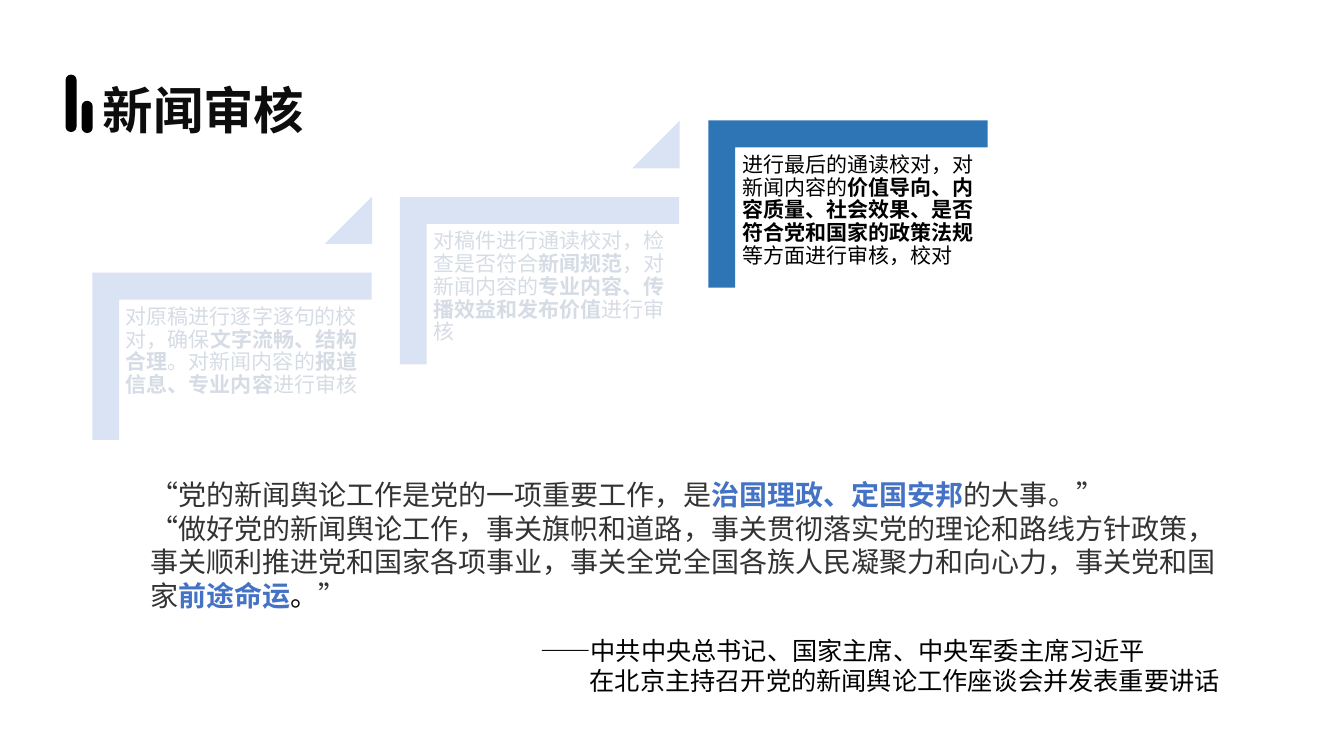
import pptx
import pptx.dml.color
import pptx.enum.lang
import pptx.enum.shapes
import pptx.enum.text
import pptx.util

PX = 9144  # EMU per px, 100 px to the inch
FONT = "Times New Roman"
SHAPES = pptx.enum.shapes.MSO_SHAPE
CORNER = SHAPES.from_xml("corner")
ANCHORS = pptx.enum.text.MSO_ANCHOR
CHINESE = pptx.enum.lang.MSO_LANGUAGE_ID.SIMPLIFIED_CHINESE

BLACK, TITLE_INK, QUOTE_INK, ACCENT = "000000", "0D0D0D", "333333", "4472C4"
FADED_FILL, FADED_INK, ACTIVE_FILL = "DAE3F3", "D6DCE5", "2E75B6"

# Each run is (text, bold)
REVIEW_STEPS = [
    [("对原稿进行逐字逐句的校对，确保", False), ("文字流畅、结构合理", True),
     ("。对新闻内容的", False), ("报道信息、专业内容", True), ("进行审核", False)],
    [("对稿件进行通读校对，检查是否符合", False), ("新闻规范", True),
     ("，对新闻内容的", False), ("专业内容、传播效益和发布价值", True),
     ("进行审核", False)],
    [("进行最后的通读校对，对新闻内容的", False),
     ("价值导向、内容质量、社会效果、是否符合党和国家的政策法规", True),
     ("等方面进行审核，校对", False)],
]

# Each run is (text, bold, colour)
QUOTE = [
    [("“党的新闻舆论工作是党的一项重要工作，是", False, QUOTE_INK),
     ("治国理政、定国安邦", True, ACCENT), ("的大事。”", False, QUOTE_INK)],
    [("“做好党的新闻舆论工作，事关旗帜和道路，事关贯彻落实党的理论和路线方针政策，"
      "事关顺利推进党和国家各项事业，事关全党全国各族人民凝聚力和向心力，事关党和国家",
      False, QUOTE_INK),
     ("前途命运", True, ACCENT), ("。", False, BLACK), ("”", False, QUOTE_INK)],
]
SPEECH_SOURCE = [
    [("——中共中央总书记、国家主席、中央军委主席习近平", False, BLACK)],
    [("在北京主持召开党的新闻舆论工作座谈会并发表重要讲话", False, BLACK)],
]


def rgb(code):
    return pptx.dml.color.RGBColor.from_string(code)


def emu(*lengths):
    return [pptx.util.Emu(length * PX) for length in lengths]


def add_block(slide, preset, box, fill, adjustments=(), rotation=0):
    block = slide.shapes.add_shape(preset, *emu(*box))
    block.shadow.inherit = False
    block.fill.solid()
    block.fill.fore_color.rgb = rgb(fill)
    block.line.fill.background()
    block.rotation = rotation
    for index, value in enumerate(adjustments):
        block.adjustments[index] = value


def add_text(slide, box, paragraphs, size, spacing=1.0, inset=None,
             anchor=ANCHORS.TOP):
    frame = slide.shapes.add_textbox(*emu(*box)).text_frame
    frame.word_wrap = True
    frame.vertical_anchor = anchor
    if inset is not None:
        for side in ("left", "top", "right", "bottom"):
            setattr(frame, f"margin_{side}", emu(inset)[0])
    for index, runs in enumerate(paragraphs):
        paragraph = frame.add_paragraph() if index else frame.paragraphs[0]
        paragraph.line_spacing = spacing
        for text, bold, colour in runs:
            run = paragraph.add_run()
            run.text = text
            font_format = {"name": FONT, "size": pptx.util.Pt(size),
                           "bold": bold, "language_id": CHINESE}
            for name, value in font_format.items():
                setattr(run.font, name, value)
            run.font.color.rgb = rgb(colour)
    return frame


def add_heading(slide, x, y):
    # Two rounded bars on a shared baseline, then the title
    for left, top, height in ((0, 0, 57), (16, 26, 32)):
        add_block(slide, SHAPES.ROUNDED_RECTANGLE,
                  (x + left, y + top, 11, height), BLACK, [0.5])
    add_text(slide, (x + 27, y - 34, 1150, 145),
             [[("新闻审核", True, TITLE_INK)]], 36, 0.9, anchor=ANCHORS.MIDDLE)


def add_review_step(slide, x, y, runs, is_last):
    width, height = 277, 166
    fill, ink = (ACTIVE_FILL, BLACK) if is_last else (FADED_FILL, FADED_INK)
    # The corner is turned a quarter, so its sides swap about its centre
    shift = (width - height) // 2
    add_block(slide, CORNER, (x + shift, y - shift, height, width),
              fill, [0.161, 0.161], 90)
    add_text(slide, (x + 27, y + 28, 250, 219),
             [[(text, bold, ink) for text, bold in runs]], 15, 0.9, 6)
    if not is_last:
        add_block(slide, SHAPES.ISOSCELES_TRIANGLE,
                  (x + 230, y - 75, 47, 47), fill, [1])


def add_staircase(slide, x, y):
    last = len(REVIEW_STEPS) - 1
    for index, runs in enumerate(REVIEW_STEPS):
        add_review_step(slide, x + index * 611 // 2, y - index * 151 // 2,
                        runs, index == last)


def add_quotation(slide, x, y):
    add_text(slide, (x, y, 1084, 145), QUOTE, 20)
    source = add_text(slide, (x + 387, y + 156, 807, 71), SPEECH_SOURCE, 18)
    # The second line starts after the dash
    properties = source.paragraphs[1]._p.get_or_add_pPr()
    properties.set("marL", str(49 * PX))
    properties.set("indent", "0")


def main():
    deck = pptx.Presentation()
    deck.slide_width, deck.slide_height = emu(1333, 750)
    slide = deck.slides.add_slide(deck.slide_layouts[6])
    add_heading(slide, 65, 74)
    add_staircase(slide, 92, 270)
    add_quotation(slide, 139, 469)
    deck.save("out.pptx")


if __name__ == "__main__":
    main()
